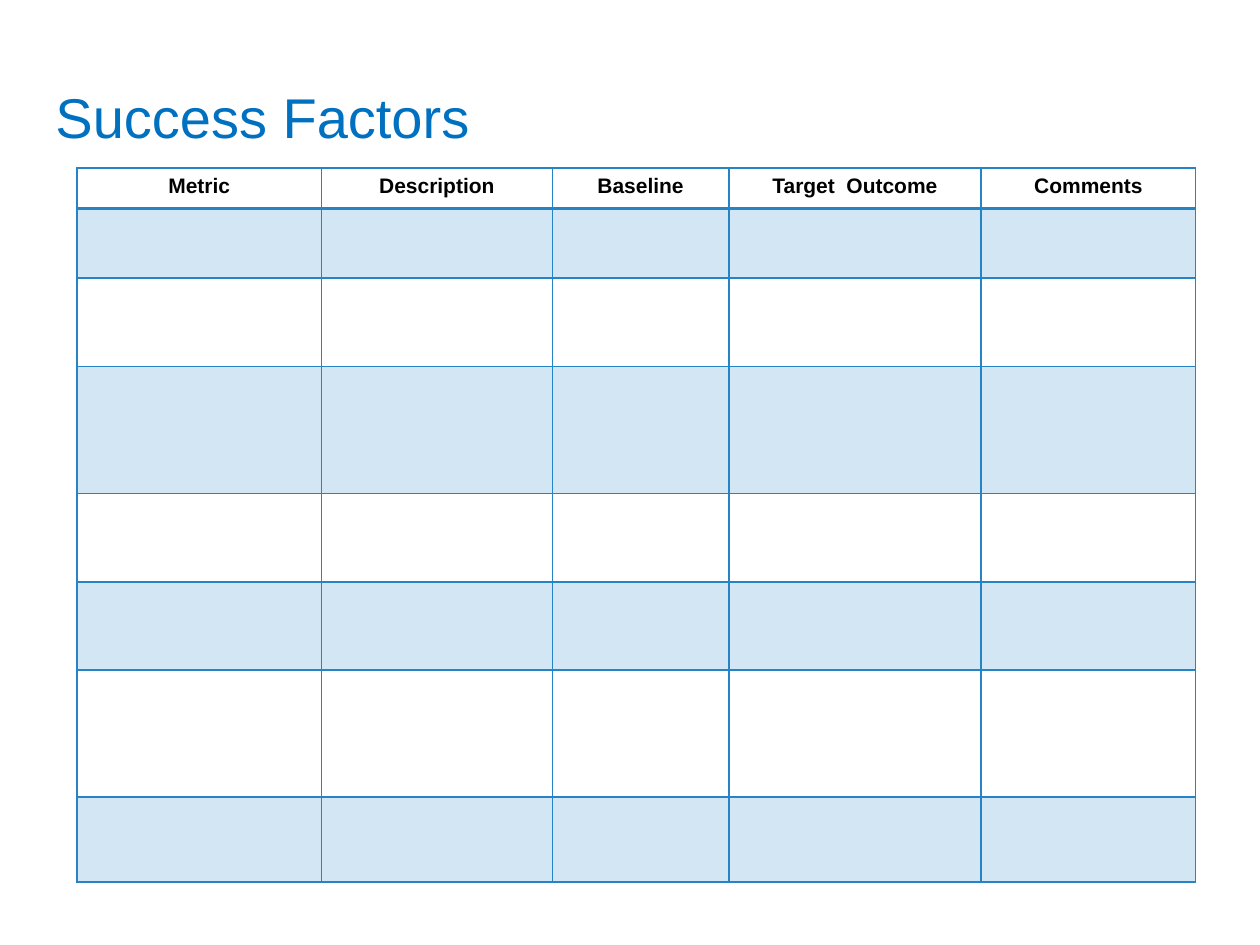
from dataclasses import dataclass

from lxml.etree import SubElement as Sub
from pptx import Presentation
from pptx.dml.color import RGBColor as Rgb
from pptx.enum.text import MSO_ANCHOR as Anchor, PP_ALIGN as Align
from pptx.oxml.ns import qn
from pptx.util import Pt

HUES = {"title": "0070C0", "text": "000000", "grid": "2683C6"}
FONT = "Arial"
TINT = 20


@dataclass
class Column:
    head: str
    width: float


COLUMNS = [
    Column("Metric", 139.7),
    Column("Description", 132),
    Column("Baseline", 100.8),
    Column("Target  Outcome", 144.2),
    Column("Comments", 122.6),
]
HEIGHTS = [23, 40, 50.4, 72.7, 50.4, 50.4, 72.7, 48.4]


def write(frame, text: str, *, size: float, hue: str, bold: bool = False,
          align=Align.LEFT) -> None:
    frame.text = text
    par = frame.paragraphs[0]
    par.alignment = align
    font = par.runs[0].font
    font.name, font.size, font.bold = FONT, Pt(size), bold
    font.color.rgb = Rgb.from_string(HUES[hue])


def rule(cell, sides: dict[str, float]) -> None:
    """Draw the cell's borders; sides maps L, R, T, B to points."""
    props = cell._tc.get_or_add_tcPr()
    for side, width in sides.items():
        line = Sub(props, qn(f"a:ln{side}"), w=str(Pt(width)))
        fill = Sub(line, qn("a:solidFill"))
        Sub(fill, qn("a:srgbClr"), val=HUES["grid"])


def shade(cell, tinted: bool) -> None:
    if not tinted:
        cell.fill.background()
        return
    cell.fill.solid()
    cell.fill.fore_color.rgb = Rgb.from_string(HUES["grid"])
    color = cell._tc.tcPr.find(f"{qn('a:solidFill')}/{qn('a:srgbClr')}")
    Sub(color, qn("a:alpha"), val=str(TINT * 1000))


def add_title(slide, text: str) -> None:
    title = slide.shapes.title
    title.left, title.top = Pt(31.7), Pt(21.6)
    title.width, title.height = Pt(664.6), Pt(90)
    frame = title.text_frame
    frame.margin_left = frame.margin_right = 0
    frame.margin_top = frame.margin_bottom = 0
    frame.vertical_anchor = Anchor.MIDDLE
    frame.word_wrap = True
    write(frame, text, size=32, hue="title")


def add_grid(slide, cols: list[Column], heights: list[float]) -> None:
    wide = sum(col.width for col in cols)
    grid = slide.shapes.add_table(len(heights), len(cols), Pt(44), Pt(96),
                                  Pt(wide), Pt(sum(heights))).table
    grid.first_row = grid.horz_banding = False
    for col, item in zip(grid.columns, cols):
        col.width = Pt(item.width)
    for r, high in enumerate(heights):
        grid.rows[r].height = Pt(high)
        for c, item in enumerate(cols):
            cell = grid.cell(r, c)
            rule(cell, {"L": 1, "R": 1, "T": 2 if r == 1 else 1,
                        "B": 2 if r == 0 else 1})
            shade(cell, r % 2 == 1)
            if r == 0:
                write(cell.text_frame, item.head, size=12, hue="text",
                      bold=True, align=Align.CENTER)


def main() -> None:
    deck = Presentation()
    deck.slide_width, deck.slide_height = Pt(720), Pt(540)
    slide = deck.slides.add_slide(deck.slide_layouts[5])
    add_title(slide, "Success Factors")
    add_grid(slide, COLUMNS, HEIGHTS)
    deck.save("out.pptx")


if __name__ == "__main__":
    main()
